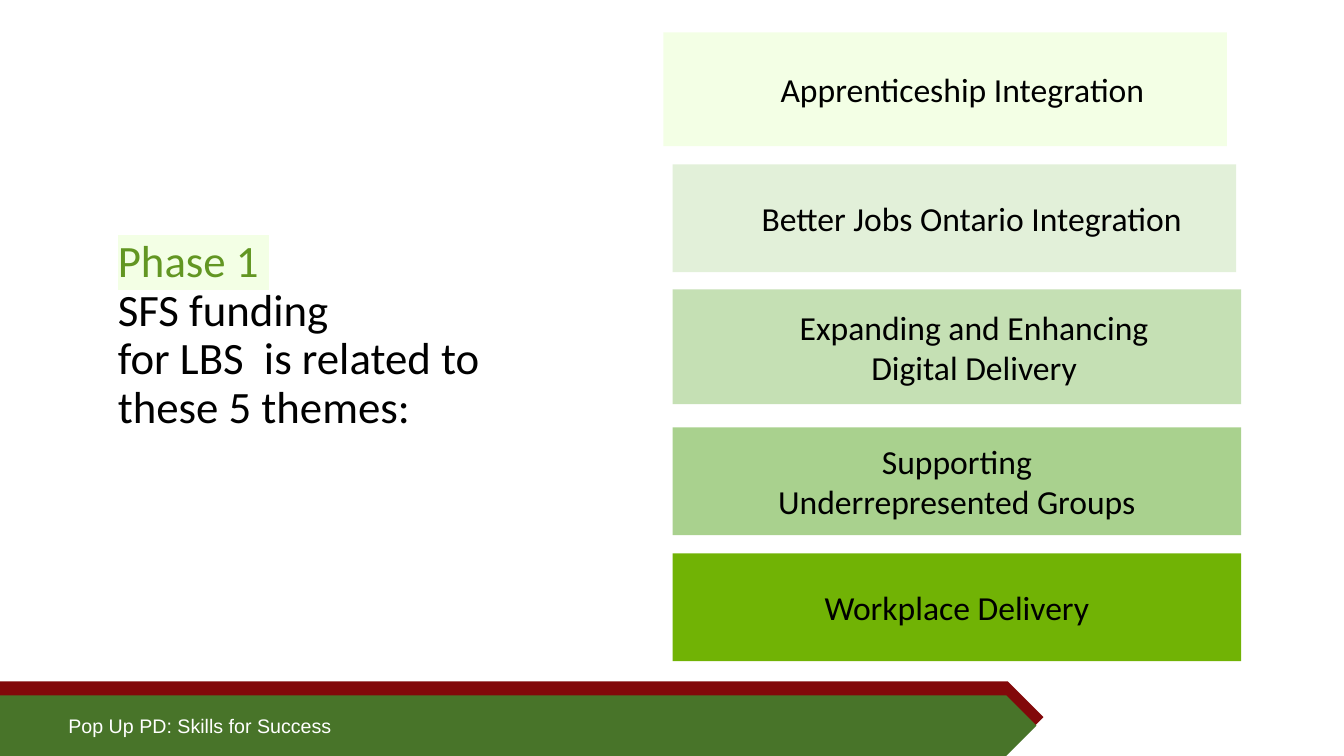
from lxml import etree
from pptx import Presentation
from pptx.dml.color import RGBColor
from pptx.enum.shapes import MSO_SHAPE
from pptx.enum.text import MSO_ANCHOR, PP_ALIGN
from pptx.oxml.ns import qn
from pptx.util import Inches, Pt

RECTANGLE = MSO_SHAPE.RECTANGLE
PENTAGON = MSO_SHAPE.PENTAGON
MIDDLE = MSO_ANCHOR.MIDDLE
CENTER = PP_ALIGN.CENTER

SLIDE_WIDTH = Inches(13.33)
SLIDE_HEIGHT = Inches(7.5)
BLANK_LAYOUT = 6
PALE_GREEN = "F3FFE5"
BLACK = "000000"

THEMES = [
    (["Apprenticeship Integration"], PALE_GREEN, (49.36, 4.27, 41.94, 15.07), 0.44),
    (["Better Jobs Ontario Integration"], "E2F0D9", (50.04, 21.73, 41.94, 14.27), 0.44),
    (["Expanding and Enhancing", "Digital Delivery"], "C5E0B4", (50.04, 38.27, 42.31, 15.2), 0.44),
    (["Supporting", "Underrepresented Groups"], "A9D18E", (50.04, 56.53, 42.31, 14.27), 0.1),
    (["Workplace Delivery"], "71B305", (50.04, 73.2, 42.31, 14.27), 0.1),
]


def color(value):
    """Turn a hex string into a colour."""
    return RGBColor.from_string(value)


def frame(left, top, width, height):
    """Turn percentages of the slide's size into lengths."""
    return (
        int(SLIDE_WIDTH * left / 100),
        int(SLIDE_HEIGHT * top / 100),
        int(SLIDE_WIDTH * width / 100),
        int(SLIDE_HEIGHT * height / 100),
    )


def set_font(paragraph, name, size, value):
    """Set the font of a whole paragraph."""
    paragraph.font.name = name
    paragraph.font.size = Pt(size)
    paragraph.font.color.rgb = color(value)


def add_block(slide, kind, area, fill):
    """Add a flat filled shape without an outline."""
    shape = slide.shapes.add_shape(kind, *frame(*area))
    shape.shadow.inherit = False
    shape.fill.solid()
    shape.fill.fore_color.rgb = color(fill)
    shape.line.fill.background()
    return shape


def add_text(slide, area):
    """Add a wrapping text box and return its text frame."""
    text_frame = slide.shapes.add_textbox(*frame(*area)).text_frame
    text_frame.word_wrap = True
    text_frame.vertical_anchor = MIDDLE
    return text_frame


def add_theme(slide, lines, fill, area, left_inset):
    """Add one theme band with its centred label."""
    text_frame = add_block(slide, RECTANGLE, area, fill).text_frame
    text_frame.vertical_anchor = MIDDLE
    text_frame.margin_left = Inches(left_inset)
    text_frame.text = "\n".join(lines)
    for paragraph in text_frame.paragraphs:
        paragraph.alignment = CENTER
        set_font(paragraph, "Calibri", 24, BLACK)


def highlight(run, value):
    """Put a highlight colour behind a run that has a font colour."""
    marker = etree.Element(qn("a:highlight"))
    etree.SubElement(marker, qn("a:srgbClr"), val=value)
    run.font.fill._xPr.find(qn("a:solidFill")).addnext(marker)


def add_title(slide):
    """Add the title with its highlighted first line."""
    paragraph = add_text(slide, (8.03, 28.8, 30.76, 31.33)).paragraphs[0]
    paragraph.line_spacing = 0.9
    set_font(paragraph, "Calibri", 32, BLACK)
    phase = paragraph.add_run()
    phase.text = "Phase 1 "
    phase.font.color.rgb = color("629622")
    highlight(phase, PALE_GREEN)
    for line in ("SFS funding", "for LBS  is related to", "these 5 themes:"):
        paragraph.add_line_break()
        paragraph.add_run().text = line


def add_footer(slide):
    """Add the two footer arrows and the footer text."""
    add_block(slide, PENTAGON, (0, 90.13, 77.64, 9.47), "82080A")
    add_block(slide, PENTAGON, (0, 92, 77.12, 8), "487429")
    paragraph = add_text(slide, (4.35, 93.73, 52.29, 4.53)).paragraphs[0]
    paragraph.text = "Pop Up PD: Skills for Success"
    set_font(paragraph, "Arial", 14, "FFFFFF")


def main():
    """Build and save the slide."""
    presentation = Presentation()
    presentation.slide_width = SLIDE_WIDTH
    presentation.slide_height = SLIDE_HEIGHT
    slide = presentation.slides.add_slide(presentation.slide_layouts[BLANK_LAYOUT])
    add_footer(slide)
    add_title(slide)
    for theme in THEMES:
        add_theme(slide, *theme)
    presentation.save("out.pptx")


if __name__ == "__main__":
    main()
